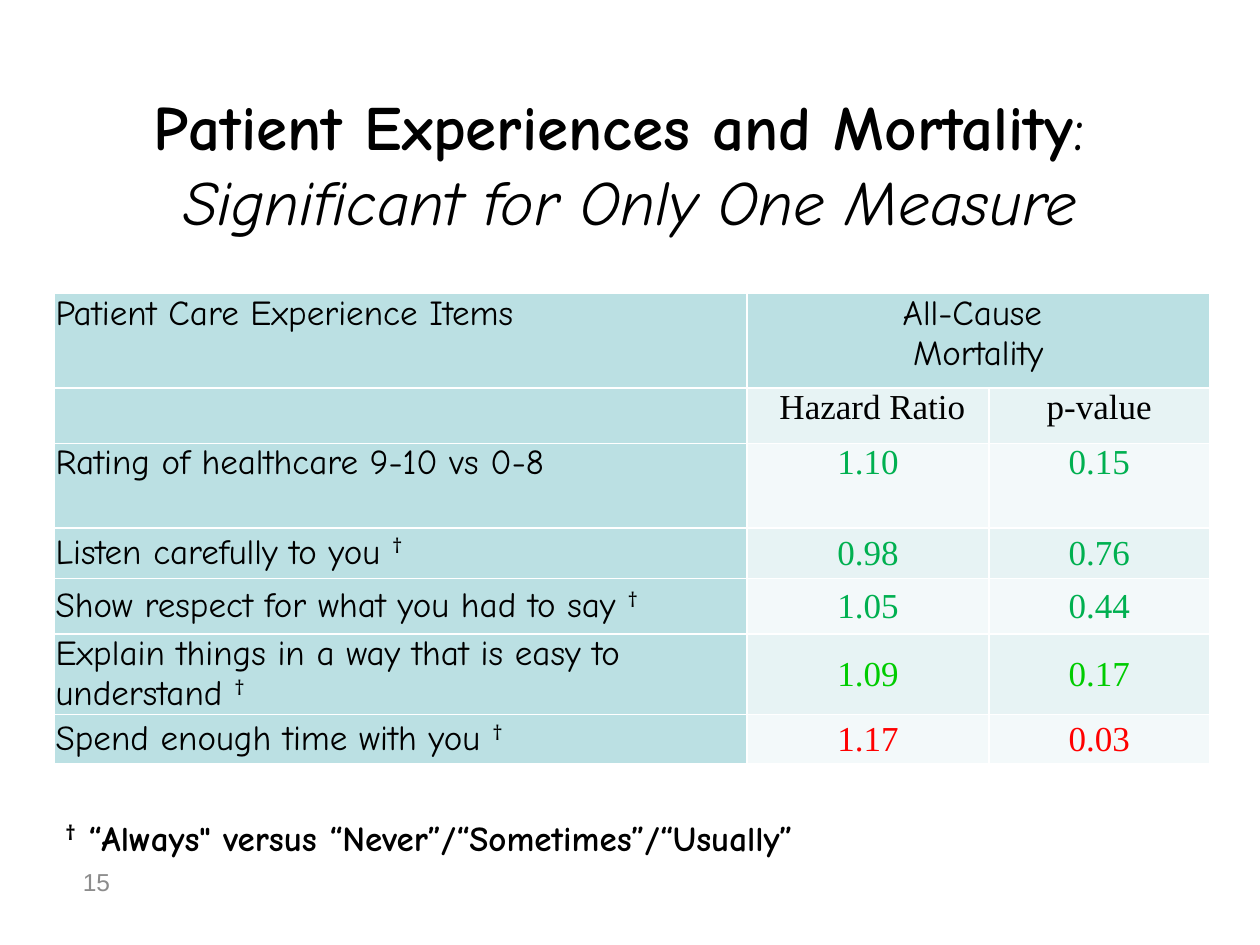
from lxml import etree
from pptx import Presentation
from pptx.dml.color import RGBColor
from pptx.enum.text import MSO_ANCHOR, MSO_AUTO_SIZE, PP_ALIGN
from pptx.oxml.ns import qn
from pptx.util import Cm, Pt

LEFT, CENTER = PP_ALIGN.LEFT, PP_ALIGN.CENTER
TOP, MIDDLE = MSO_ANCHOR.TOP, MSO_ANCHOR.MIDDLE
NO_AUTOFIT = MSO_AUTO_SIZE.NONE
TITLE_ONLY = 5
HAND, SERIF, SANS = "Comic Neue", "Times New Roman", "Arial"
BLACK, WHITE, GRAY = "000000", "FFFFFF", "8C8C8C"
GREEN, BRIGHT_GREEN, RED = "00B050", "00CC00", "FF0000"
TEAL, BANDS = "BBE0E3", ("F3F9FA", "E7F3F4")
DAGGER = "†"

COLUMN_WIDTHS = (13.97, 4.88, 4.44)
ROW_HEIGHTS = (1.9, 1.12, 1.7, 1.02, 1.12, 1.62, 0.99)
MEASURES = (
    ("Rating of healthcare 9-10 vs 0-8", "1.10", "0.15", GREEN),
    ("Listen carefully to you †", "0.98", "0.76", GREEN),
    ("Show respect for what you had to say †", "1.05", "0.44", GREEN),
    ("Explain things in a way that is easy to understand †", "1.09", "0.17", BRIGHT_GREEN),
    ("Spend enough time with you †", "1.17", "0.03", RED),
)


def rgb(value):
    return RGBColor.from_string(value)


class SlideBuilder:
    def __init__(self, slide):
        self.slide = slide

    def format_run(self, run, font=HAND, size=20, color=BLACK, bold=False, italic=False):
        run.font.name = font
        run.font.size = Pt(size)
        run.font.color.rgb = rgb(color)
        run.font.bold = bold
        run.font.italic = italic

    def add_text(self, paragraph, text, align=LEFT, **style):
        paragraph.alignment = align
        before, dagger, after = text.partition(DAGGER)
        for part in filter(None, (before, dagger, after)):
            run = paragraph.add_run()
            run.text = part
            self.format_run(run, **style)
            if part == DAGGER:
                run._r.get_or_add_rPr().set("baseline", "30000")

    def title(self, heading, subtitle, left, top, width, height):
        shape = self.slide.shapes.title
        shape.left, shape.top, shape.width, shape.height = map(Cm, (left, top, width, height))
        frame = shape.text_frame
        frame.auto_size = NO_AUTOFIT
        frame.vertical_anchor = MIDDLE
        paragraph = frame.paragraphs[0]
        self.add_text(paragraph, heading, CENTER, size=36, bold=True)
        self.add_text(paragraph, ": ", CENTER, size=36)
        paragraph.add_line_break()
        self.add_text(paragraph, subtitle, CENTER, size=36, italic=True)

    def text_box(self, text, left, top, width, height, **style):
        shape = self.slide.shapes.add_textbox(*map(Cm, (left, top, width, height)))
        shape.text_frame.word_wrap = True
        self.add_text(shape.text_frame.paragraphs[0], text, **style)

    def table(self, left, top, column_widths, row_heights):
        size = Cm(sum(column_widths)), Cm(sum(row_heights))
        table = self.slide.shapes.add_table(
            len(row_heights), len(column_widths), Cm(left), Cm(top), *size).table
        for column, width in zip(table.columns, column_widths):
            column.width = Cm(width)
        for row, height in zip(table.rows, row_heights):
            row.height = Cm(height)
        return table

    def cell(self, cell, lines, fill, anchor=TOP, **style):
        cell.margin_left = cell.margin_right = Cm(0.03)
        cell.margin_top = cell.margin_bottom = 0
        cell.vertical_anchor = anchor
        self.borders(cell)
        cell.fill.solid()
        cell.fill.fore_color.rgb = rgb(fill)
        frame = cell.text_frame
        for index, line in enumerate(lines):
            paragraph = frame.add_paragraph() if index else frame.paragraphs[0]
            self.add_text(paragraph, line, **style)

    def borders(self, cell):
        properties = cell._tc.get_or_add_tcPr()
        for side in ("a:lnL", "a:lnR", "a:lnT", "a:lnB"):
            line = etree.SubElement(properties, qn(side), w=str(Pt(1)))
            fill = etree.SubElement(line, qn("a:solidFill"))
            etree.SubElement(fill, qn("a:srgbClr"), val=WHITE)


def main():
    presentation = Presentation()
    presentation.slide_width, presentation.slide_height = Cm(25.4), Cm(19.05)
    slide = presentation.slides.add_slide(presentation.slide_layouts[TITLE_ONLY])
    builder = SlideBuilder(slide)

    builder.title("Patient Experiences and Mortality",
                  "Significant for Only One Measure", 0, 1.91, 25.4, 2.74)

    table = builder.table(1.09, 5.92, COLUMN_WIDTHS, ROW_HEIGHTS)
    table.cell(0, 1).merge(table.cell(0, 2))
    builder.cell(table.cell(0, 0), ["Patient Care Experience Items"], TEAL)
    builder.cell(table.cell(0, 1), ["All-Cause ", "Mortality"], TEAL, align=CENTER)
    builder.cell(table.cell(0, 2), [], TEAL)
    builder.cell(table.cell(1, 0), [], TEAL)
    for column, label in enumerate((" Hazard Ratio", "p-value"), start=1):
        builder.cell(table.cell(1, column), [label], BANDS[1], align=CENTER, font=SERIF)
    for row, (measure, *values, color) in enumerate(MEASURES, start=2):
        anchor = TOP if row == 2 else MIDDLE
        builder.cell(table.cell(row, 0), [measure], TEAL, anchor)
        for column, value in enumerate(values, start=1):
            builder.cell(table.cell(row, column), [value], BANDS[row % 2], anchor,
                         align=CENTER, font=SERIF, color=color)

    builder.text_box("† “Always\" versus “Never”/“Sometimes”/“Usually”",
                     1.07, 16.33, 22.86, 1.12, bold=True)
    builder.text_box("15", 1.42, 17.35, 6.65, 1.32, font=SANS, size=14, color=GRAY)
    presentation.save("out.pptx")


if __name__ == "__main__":
    main()
